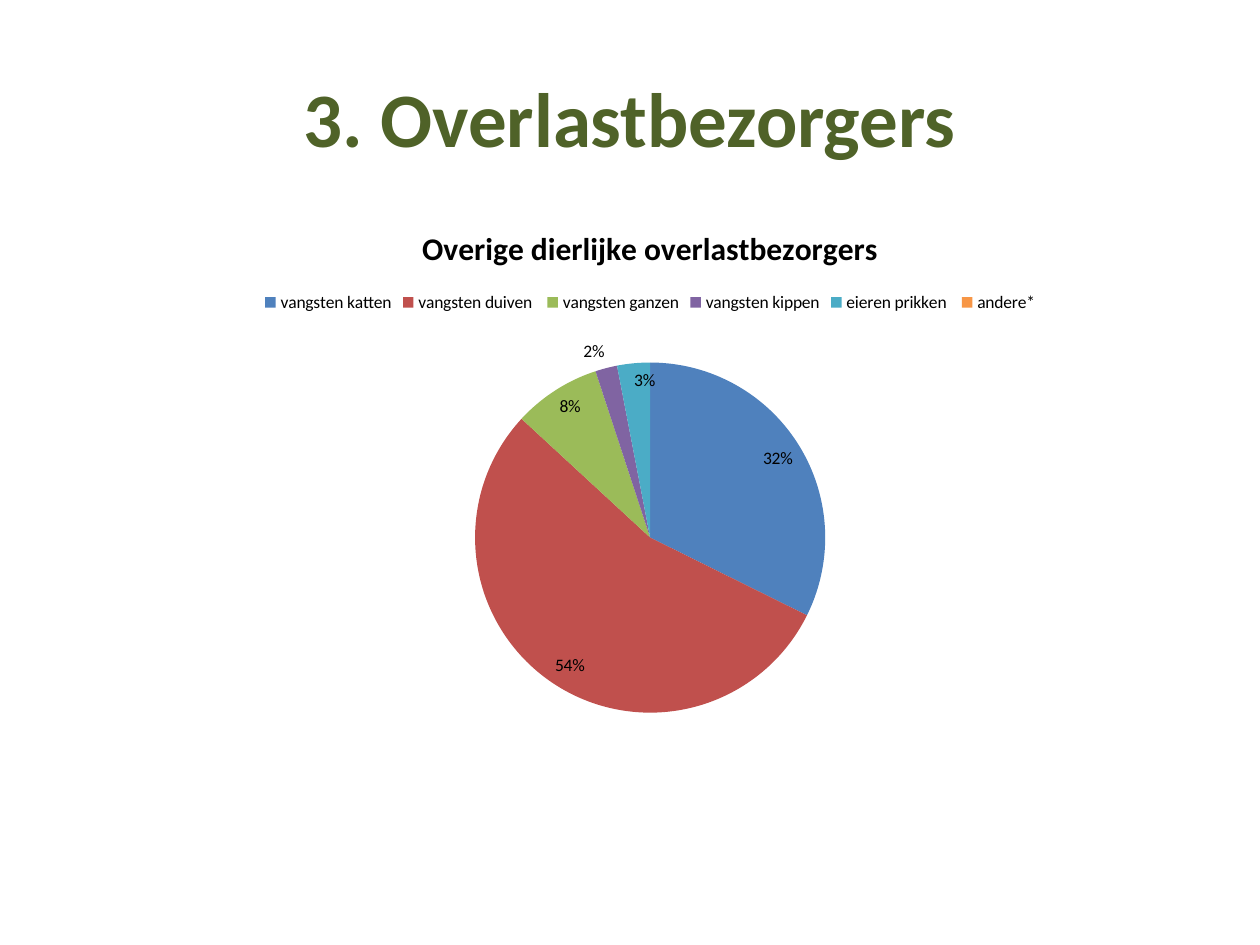
from copy import deepcopy

from lxml import etree
from pptx import Presentation
from pptx.chart.data import CategoryChartData
from pptx.dml.color import RGBColor
from pptx.enum import chart as ch, text
from pptx.oxml.ns import qn
from pptx.util import Inches, Pt

GREEN = RGBColor(0x4F, 0x62, 0x28)
BLACK = RGBColor(0, 0, 0)
SLICES = [
    ("vangsten katten", 32, RGBColor(0x4F, 0x81, 0xBD)),
    ("vangsten duiven ", 54, RGBColor(0xC0, 0x50, 0x4D)),
    ("vangsten ganzen", 8, RGBColor(0x9B, 0xBB, 0x59)),
    ("vangsten kippen", 2, RGBColor(0x80, 0x64, 0xA2)),
    ("eieren prikken ", 3, RGBColor(0x4B, 0xAC, 0xC6)),
    ("andere*", 0, RGBColor(0xF7, 0x96, 0x46)),
]
CHART_TITLE = "Overige dierlijke overlastbezorgers"
FONT = "Calibri"


def write(tf, content, size, color, bold=False, align=text.PP_ALIGN.CENTER):
    p = tf.paragraphs[0]
    p.alignment = align
    r = p.add_run()
    r.text = content
    r.font.name, r.font.size, r.font.bold = FONT, Pt(size), bold
    r.font.color.rgb = color


prs = Presentation()
prs.slide_width, prs.slide_height = Inches(10), Inches(7.5)
s = prs.slides.add_slide(prs.slide_layouts[6])

tf = s.shapes.add_textbox(Inches(0.5), Inches(0.3), Inches(9), Inches(1.25)).text_frame
tf.word_wrap = True
tf.vertical_anchor = text.MSO_ANCHOR.MIDDLE
write(tf, "3. Overlastbezorgers", size=44, color=GREEN, bold=True)

data = CategoryChartData()
data.categories = [name for name, _, _ in SLICES]
data.add_series(CHART_TITLE, [value for _, value, _ in SLICES])
chart = s.shapes.add_chart(ch.XL_CHART_TYPE.PIE, Inches(1.3), Inches(1.62),
                           Inches(7.72), Inches(4.17), data).chart
chart.font.name, chart.font.size = FONT, Pt(10)
chart.font.color.rgb = BLACK
chart.has_title = True
write(chart.chart_title.text_frame, CHART_TITLE, size=18, color=BLACK, bold=True)
chart.has_legend = True
chart.legend.position = ch.XL_LEGEND_POSITION.TOP
chart.legend.include_in_layout = False

plot = chart.plots[0]
plot.vary_by_categories = True
series = plot.series[0]
for i, (_, _, color) in enumerate(SLICES):
    fill = series.points[i].format.fill
    fill.solid()
    fill.fore_color.rgb = color

labels = series.data_labels
labels.show_value = True
labels.number_format = '0"%";;'  # a zero slice gets no label
labels.number_format_is_linked = False
labels.position = ch.XL_LABEL_POSITION.INSIDE_END

# The thin "kippen" slice has its label outside
series.points[3].data_label.position = ch.XL_LABEL_POSITION.OUTSIDE_END
d_lbls = series._element.find(qn("c:dLbls"))
d_lbls.find(qn("c:dLbl")).find(qn("c:idx")).addnext(
    deepcopy(d_lbls.find(qn("c:numFmt"))))

# Place the pie within the chart, as fractions of the chart's size
plot_area = chart._chartSpace.chart.plotArea
for old in plot_area.findall(qn("c:layout")):
    plot_area.remove(old)
layout = etree.Element(qn("c:layout"))
manual = etree.SubElement(layout, qn("c:manualLayout"))
for tag, val in [("layoutTarget", "inner"), ("xMode", "edge"), ("yMode", "edge"),
                 ("x", 0.32), ("y", 0.3), ("w", 0.36), ("h", 0.67)]:
    etree.SubElement(manual, qn(f"c:{tag}")).set("val", str(val))
plot_area.insert(0, layout)

prs.save("out.pptx")
